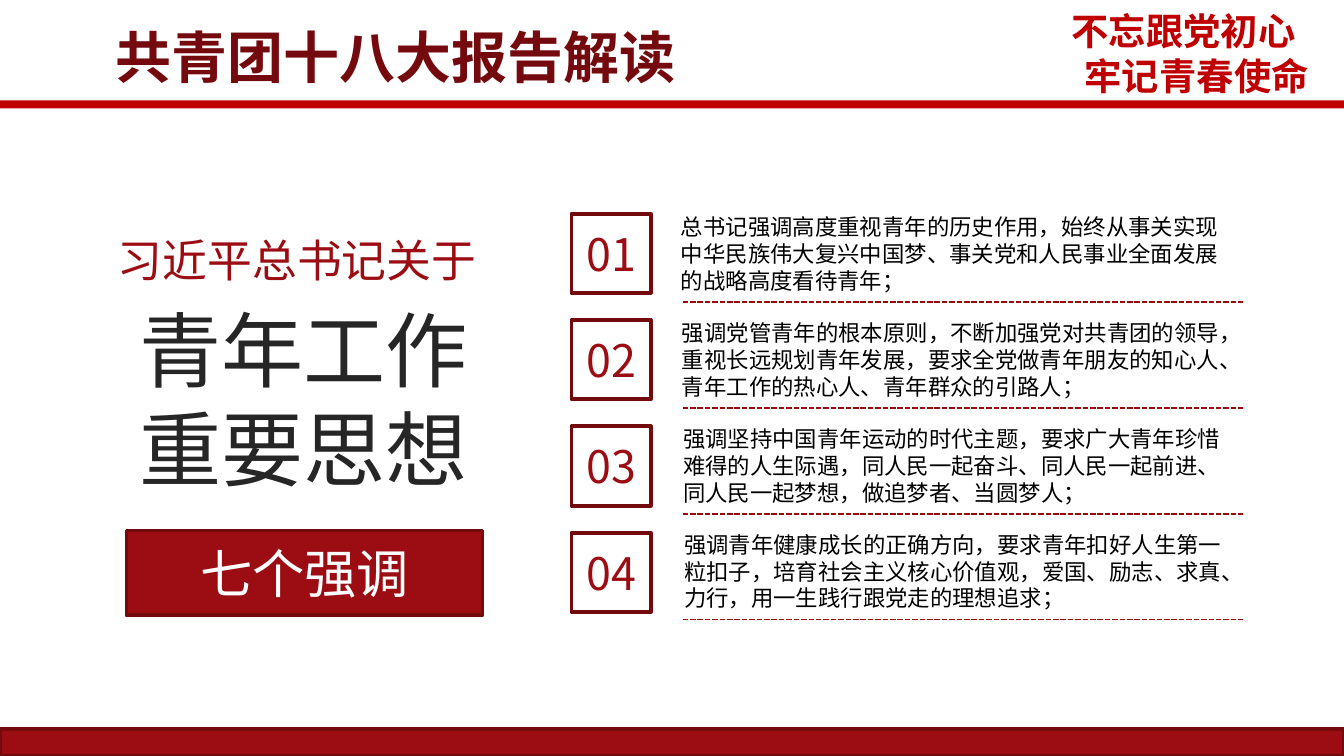
"""Build the slide about the important thoughts on youth work."""
from lxml.etree import SubElement
from pptx import Presentation
from pptx.dml.color import RGBColor
from pptx.enum.dml import MSO_LINE
from pptx.enum.shapes import MSO_CONNECTOR, MSO_SHAPE
from pptx.enum.text import MSO_ANCHOR, PP_ALIGN
from pptx.oxml.ns import qn
from pptx.util import Cm, Pt

FONT = "Noto Sans CJK SC"
WHITE = RGBColor(0xFF, 0xFF, 0xFF)
BLACK = RGBColor(0x00, 0x00, 0x00)
CHARCOAL = RGBColor(0x26, 0x26, 0x26)
BRIGHT_RED = RGBColor(0xC0, 0x00, 0x00)
DEEP_RED = RGBColor(0x9B, 0x0D, 0x13)
DASH_RED = RGBColor(0x9B, 0x09, 0x0F)
BORDER_RED = RGBColor(0x73, 0x0A, 0x0E)
TITLE_RED = RGBColor(0x74, 0x0A, 0x0E)

POINTS = [
    "总书记强调高度重视青年的历史作用，始终从事关实现中华民族伟大复兴中国梦、事关党和人民事业全面发展的战略高度看待青年；",
    "强调党管青年的根本原则，不断加强党对共青团的领导，重视长远规划青年发展，要求全党做青年朋友的知心人、青年工作的热心人、青年群众的引路人；",
    "强调坚持中国青年运动的时代主题，要求广大青年珍惜难得的人生际遇，同人民一起奋斗、同人民一起前进、同人民一起梦想，做追梦者、当圆梦人；",
    "强调青年健康成长的正确方向，要求青年扣好人生第一粒扣子，培育社会主义核心价值观，爱国、励志、求真、力行，用一生践行跟党走的理想追求；",
]


def write_text(frame, text, size, color, bold=False, align=PP_ALIGN.LEFT):
    """Fill a frame with one paragraph per line of text."""
    frame.word_wrap = True
    for index, line in enumerate(text.split("\n")):
        para = frame.add_paragraph() if index else frame.paragraphs[0]
        para.alignment = align
        para.line_spacing = Pt(size * 1.2)
        span = para.add_run()
        span.text = line
        span.font.name = FONT
        span.font.size = Pt(size)
        span.font.bold = bold
        span.font.color.rgb = color
        SubElement(span.font._element, qn("a:ea"), typeface=FONT)


def add_text(page, left, top, width, height, text, **format_options):
    """Add a text box and return it."""
    box = page.shapes.add_textbox(Cm(left), Cm(top), Cm(width), Cm(height))
    write_text(box.text_frame, text, **format_options)
    return box


def add_panel(page, left, top, width, height, fill, border=None):
    """Add a filled rectangle, with a border if a colour is given."""
    panel = page.shapes.add_shape(
        MSO_SHAPE.RECTANGLE, Cm(left), Cm(top), Cm(width), Cm(height))
    panel.shadow.inherit = False
    panel.fill.solid()
    panel.fill.fore_color.rgb = fill
    if border is None:
        panel.line.fill.background()
    else:
        panel.line.color.rgb = border
        panel.line.width = Pt(2)
    return panel


def add_label(page, left, top, width, height, text, fill, size, color):
    """Add a bordered rectangle with centred text."""
    panel = add_panel(page, left, top, width, height, fill, BORDER_RED)
    panel.text_frame.vertical_anchor = MSO_ANCHOR.MIDDLE
    write_text(panel.text_frame, text, size, color, align=PP_ALIGN.CENTER)


def add_dashes(page, left, right, top):
    """Add a horizontal dashed rule."""
    rule = page.shapes.add_connector(
        MSO_CONNECTOR.STRAIGHT, Cm(left), Cm(top), Cm(right), Cm(top))
    rule.line.color.rgb = DASH_RED
    rule.line.width = Pt(1)
    rule.line.dash_style = MSO_LINE.SQUARE_DOT
    SubElement(rule._element.spPr, qn("a:effectLst"))


def add_frame(page):
    """Add the bars, the slogan and the title."""
    add_panel(page, 0, 13.78, 25.4, 0.51, DEEP_RED, BORDER_RED)
    add_panel(page, 0, 1.9, 25.4, 0.15, BRIGHT_RED)
    slogan = add_text(page, 19.71, 0.03, 5.82, 1.96, "不忘跟党初心\n牢记青春使命",
                      size=20, color=BRIGHT_RED, bold=True, align=PP_ALIGN.CENTER)
    slogan.text_frame.margin_left = 0
    slogan.text_frame.margin_right = Cm(0.5)
    second_line = slogan.text_frame.paragraphs[1]
    second_line._p.get_or_add_pPr().set("marL", str(Cm(0.5)))
    title = add_text(page, 2.01, 0.33, 14.12, 1.47, "共青团十八大报告解读",
                     size=30, color=TITLE_RED, bold=True)
    title.text_frame.margin_left = title.text_frame.margin_right = Cm(0.18)
    title.text_frame.margin_top = title.text_frame.margin_bottom = Cm(0.1)


def add_theme(page):
    """Add the theme of the slide on the left."""
    add_text(page, 1.98, 4.27, 7.52, 1.3, "习近平总书记关于", size=24, color=DEEP_RED)
    add_text(page, 2.11, 5.54, 7.26, 4.01, "青年工作\n重要思想",
             size=44, color=CHARCOAL, align=PP_ALIGN.CENTER)
    add_label(page, 2.39, 10.03, 6.73, 1.6, "七个强调", DEEP_RED, 28, WHITE)


def add_point(page, index, text):
    """Add one numbered point with its dashed rule."""
    right = 23.5
    left = 12.62 + 0.02 * index
    add_label(page, 10.8, 4.04 + 2.01 * index, 1.5, 1.5,
              f"{index + 1:02}", WHITE, 24, DEEP_RED)
    add_text(page, left, 3.91 + 2 * index, right - left, 1.8, text,
             size=12, color=BLACK)
    add_dashes(page, 12.9, right, 5.71 + 2 * index)


def main():
    """Build and save the deck."""
    deck = Presentation()
    deck.slide_width, deck.slide_height = Cm(25.4), Cm(14.29)
    page = deck.slides.add_slide(deck.slide_layouts[6])
    add_frame(page)
    add_theme(page)
    for index, text in enumerate(POINTS):
        add_point(page, index, text)
    deck.save("out.pptx")


if __name__ == "__main__":
    main()
